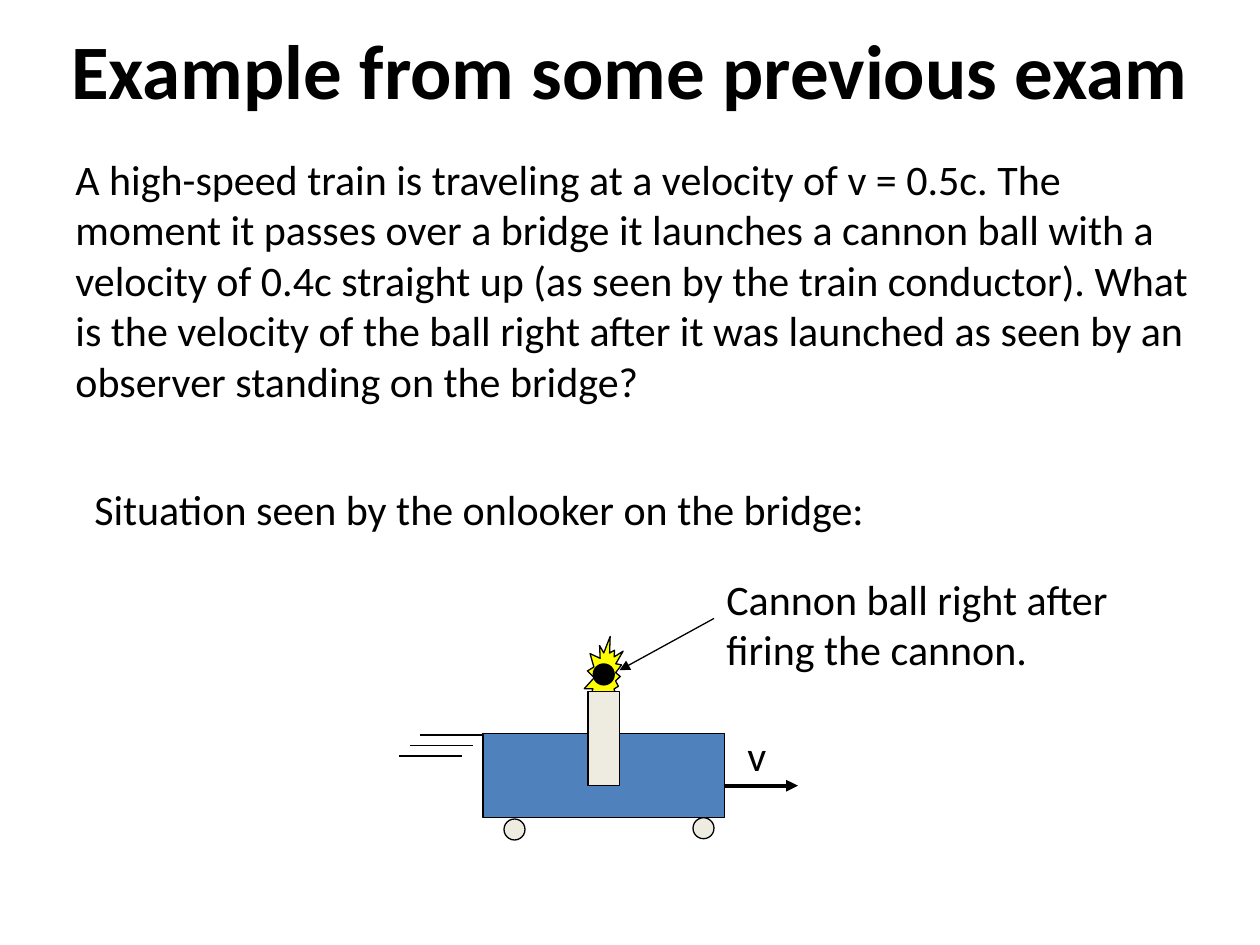
import pptx
import pptx.util
import pptx.dml.color
import pptx.enum.shapes
import pptx.enum.text
import pptx.oxml

Pt = pptx.util.Pt
Kind = pptx.enum.shapes.MSO_SHAPE
Text = pptx.enum.text
HEX = {"ink": "000000", "flash": "FFFF00", "train": "4F81BD", "pale": "EEECE1"}
MAIN = "http://schemas.openxmlformats.org/drawingml/2006/main"


def color(name):
    return pptx.dml.color.RGBColor.from_string(HEX[name])


def write(frame, words, size, bold=False):
    """Add one run to the frame's first paragraph."""
    run = frame.paragraphs[0].add_run()
    run.text = words
    run.font.name = "Calibri"
    run.font.size = Pt(size)
    run.font.bold = bold
    run.font.color.rgb = color("ink")


deck = pptx.Presentation()
deck.slide_width, deck.slide_height = Pt(720), Pt(540)
slide = deck.slides.add_slide(deck.slide_layouts[5])
shapes = slide.shapes

# Title
title = shapes.title
title.left, title.top, title.width, title.height = Pt(0), Pt(0), Pt(720), Pt(78)
title.text_frame.vertical_anchor = Text.MSO_ANCHOR.MIDDLE
title.text_frame.paragraphs[0].alignment = Text.PP_ALIGN.CENTER
write(title.text_frame, "Example from some previous exam", 44, True)

# Train, cannon, wheels and ball, from back to front
for kind, fill, left, top, width, height, turn in [
    (Kind.EXPLOSION2, "flash", 324.7, 373, 41.8, 23.8, 290.6),
    (Kind.RECTANGLE, "train", 276, 419, 138, 48, 0),
    (Kind.RECTANGLE, "pale", 336, 395, 18, 54, 0),
    (Kind.OVAL, "pale", 288, 468, 12, 12, 0),
    (Kind.OVAL, "pale", 396, 467.3, 12, 12, 0),
    (Kind.OVAL, "ink", 339, 379.4, 12, 12, 0),
]:
    part = shapes.add_shape(kind, Pt(left), Pt(top), Pt(width), Pt(height))
    part.rotation = turn
    part.shadow.inherit = False
    part.fill.solid()
    part.fill.fore_color.rgb = color(fill)
    part.line.color.rgb = color("ink")
    part.line.width = Pt(0.75)

# Velocity arrow, pointer to the ball, and three speed lines
speed = [(276 - 6 * i, 420 + 6 * i, 240 - 6 * i, 420 + 6 * i, 0.75, False)
         for i in range(3)]
for x1, y1, x2, y2, weight, arrow in [
    (414, 449, 456, 449, 2.25, True),
    (408, 353.4, 354, 383, 0.75, True),
    *speed,
]:
    line = shapes.add_connector(pptx.enum.shapes.MSO_CONNECTOR.STRAIGHT,
                                Pt(x1), Pt(y1), Pt(x2), Pt(y2))
    line.line.color.rgb = color("ink")
    line.line.width = Pt(weight)
    if arrow:
        line.line._get_or_add_ln().append(
            pptx.oxml.parse_xml(f'<a:tailEnd xmlns:a="{MAIN}" type="triangle"/>'))
    line._element.spPr.append(
        pptx.oxml.parse_xml(f'<a:effectLst xmlns:a="{MAIN}"/>'))

# Problem and labels
for words, left, top, width, height, wrap in [
    ("A high-speed train is traveling at a velocity of v = 0.5c. The moment it "
     "passes over a bridge it launches a cannon ball with a velocity of 0.4c "
     "straight up (as seen by the train conductor). What is the velocity of the "
     "ball right after it was launched as seen by an observer standing on the "
     "bridge?", 36, 84.2, 653.8, 152.6, True),
    ("v", 420, 413.3, 26.6, 36, False),
    ("Cannon ball right after firing the cannon.", 408, 324, 252, 65.5, True),
    ("Situation seen by the onlooker on the bridge:", 46.8, 273, 458.6, 36.7, False),
]:
    box = shapes.add_textbox(Pt(left), Pt(top), Pt(width), Pt(height))
    box.text_frame.word_wrap = wrap
    write(box.text_frame, words, 24)

deck.save("out.pptx")
